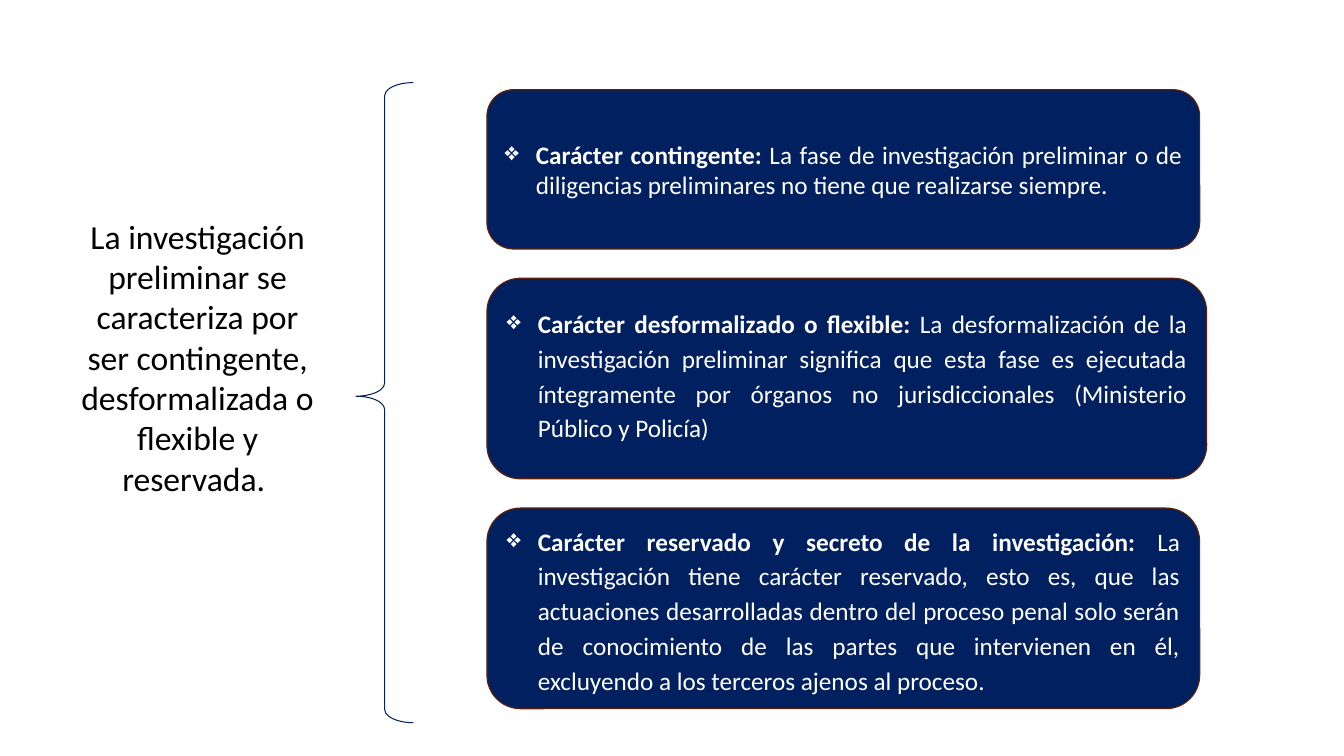
from dataclasses import dataclass

from lxml.etree import SubElement
from pptx import Presentation
from pptx.dml.color import RGBColor
from pptx.enum.shapes import MSO_SHAPE
from pptx.enum.text import MSO_ANCHOR, PP_ALIGN
from pptx.oxml.ns import qn
from pptx.shapes.autoshape import Shape
from pptx.slide import Slide
from pptx.text.text import _Paragraph as Paragraph
from pptx.util import Inches, Pt

SLIDE_WIDTH, SLIDE_HEIGHT = Inches(13.33), Inches(7.5)
COLUMN, ROW = SLIDE_WIDTH / 100, SLIDE_HEIGHT / 100
COLORS = {"navy": "002060", "border": "5C200A", "white": "FFFFFF", "black": "000000"}
CARD_LEFT, FIRST_CARD_TOP, CARD_GAP = 36.23, 11.87, 3.87
HANGING_INDENT = Inches(0.31)
SPACED = {"line_spacing": 1.15, "space_after": Pt(8)}


@dataclass(frozen=True)
class Area:
    left: float
    top: float
    width: float
    height: float

    def lengths(self) -> tuple[int, int, int, int]:
        return (round(self.left * COLUMN), round(self.top * ROW),
                round(self.width * COLUMN), round(self.height * ROW))


@dataclass(frozen=True)
class Card:
    heading: str
    body: str
    width: float
    height: float
    paragraph_format: dict
    bottom_margin: float = 0.05


CARDS = [
    Card("Carácter contingente: ",
         "La fase de investigación preliminar o de diligencias preliminares "
         "no tiene que realizarse siempre.", 53.03, 21.07, {}),
    Card("Carácter desformalizado o flexible: ",
         "La desformalización de la investigación preliminar significa que esta fase "
         "es ejecutada íntegramente por órganos no jurisdiccionales "
         "(Ministerio Público y Policía)", 53.55, 26.53, SPACED, 0.15),
    Card("Carácter reservado y secreto de la investigación: ",
         "La investigación tiene carácter reservado, esto es, que las actuaciones "
         "desarrolladas dentro del proceso penal solo serán de conocimiento de las "
         "partes que intervienen en él, excluyendo a los terceros ajenos al proceso.",
         53.03, 26.53, SPACED),
]


def apply_format(target: object, values: dict) -> None:
    for name, value in values.items():
        setattr(target, name, value)


def color(name: str) -> RGBColor:
    return RGBColor.from_string(COLORS[name])


def add_span(para: Paragraph, text: str, size: int, color_name: str, bold: bool = False) -> None:
    span = para.add_run()
    span.text = text
    apply_format(span.font, {"name": "Calibri", "size": Pt(size), "bold": bold})
    span.font.color.rgb = color(color_name)


def add_bullet(para: Paragraph) -> None:
    properties = para._p.get_or_add_pPr()
    properties.set("marL", str(HANGING_INDENT))
    properties.set("indent", str(-HANGING_INDENT))
    SubElement(properties, qn("a:buChar"), char="❖")


def add_outlined_shape(page: Slide, kind: MSO_SHAPE, area: Area, line: str, width: float) -> Shape:
    shape = page.shapes.add_shape(kind, *area.lengths())
    shape.shadow.inherit = False
    shape.line.color.rgb = color(line)
    shape.line.width = Pt(width)
    return shape


def add_card(page: Slide, card: Card, top: float) -> None:
    area = Area(CARD_LEFT, top, card.width, card.height)
    box = add_outlined_shape(page, MSO_SHAPE.ROUNDED_RECTANGLE, area, "border", 0.85)
    box.fill.solid()
    box.fill.fore_color.rgb = color("navy")
    apply_format(box.text_frame, {"word_wrap": True, "vertical_anchor": MSO_ANCHOR.MIDDLE,
                                  "margin_bottom": Inches(card.bottom_margin)})
    para = box.text_frame.paragraphs[0]
    add_bullet(para)
    apply_format(para, {"alignment": PP_ALIGN.JUSTIFY, **card.paragraph_format})
    add_span(para, card.heading, 18, "white", bold=True)
    add_span(para, card.body, 18, "white")


def add_summary(page: Slide) -> None:
    box = page.shapes.add_textbox(*Area(5.25, 27.87, 18.9, 39.07).lengths())
    box.text_frame.word_wrap = True
    para = box.text_frame.paragraphs[0]
    para.alignment = PP_ALIGN.CENTER
    add_span(para, "La investigación preliminar se caracteriza por ser contingente, "
                   "desformalizada o flexible y reservada. ", 24, "black")


def add_brace(page: Slide) -> None:
    area = Area(26.48, 10.93, 4.28, 84.67)
    brace = add_outlined_shape(page, MSO_SHAPE.LEFT_BRACE, area, "navy", 0.75)
    brace.fill.background()
    for index, share in enumerate((0.23, 0.49)):
        brace.adjustments[index] = share


def main() -> None:
    deck = Presentation()
    apply_format(deck, {"slide_width": SLIDE_WIDTH, "slide_height": SLIDE_HEIGHT})
    page = deck.slides.add_slide(deck.slide_layouts.get_by_name("Blank"))
    add_summary(page)
    add_brace(page)
    top = FIRST_CARD_TOP
    for card in CARDS:
        add_card(page, card, top)
        top += card.height + CARD_GAP
    deck.save("out.pptx")


if __name__ == "__main__":
    main()
